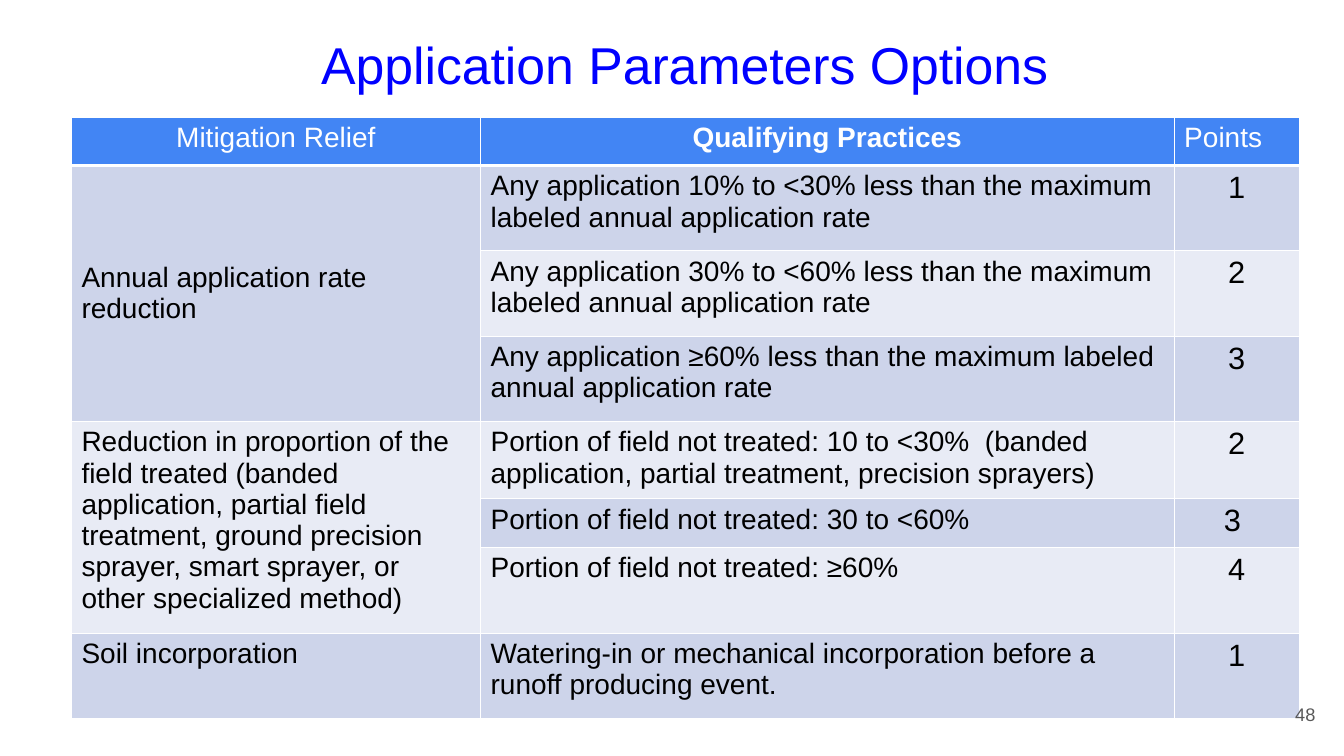
import pptx
import pptx.util
import pptx.dml.color
import pptx.enum.text
import pptx.oxml
import pptx.oxml.ns
from dataclasses import dataclass

Cm, Pt = pptx.util.Cm, pptx.util.Pt
Align = pptx.enum.text.PP_ALIGN
Anchor = pptx.enum.text.MSO_ANCHOR

# Content
TITLE = "Application Parameters Options"
PAGE = "48"
HEADS = [("Mitigation Relief", Align.CENTER, False),
         ("Qualifying Practices", Align.CENTER, True),
         ("Points", Align.LEFT, False)]
GROUPS = [
    ("Annual application rate reduction", Anchor.MIDDLE, [
        ("Any application 10% to ˂30% less than the maximum labeled annual application rate", "1"),
        ("Any application 30% to ˂60% less than the maximum labeled annual application rate", "2"),
        ("Any application ≥60% less than the maximum labeled annual application rate", "3")]),
    ("Reduction in proportion of the field treated (banded application, partial field treatment, "
     "ground precision sprayer, smart sprayer, or other specialized method)", Anchor.TOP, [
        ("Portion of field not treated: 10 to ˂30%  (banded application, partial treatment, "
         "precision sprayers)", "2"),
        ("Portion of field not treated: 30 to ˂60%", "3 "),
        ("Portion of field not treated: ≥60%", "4")]),
    ("Soil incorporation", Anchor.TOP, [
        ("Watering-in or mechanical incorporation before a runoff producing event.", "1")]),
]
WIDTHS = [10.31, 17.48, 3.15]
HEIGHTS = [1.22, 2.15, 2.15, 2.15, 1.82, 1.22, 1.98, 2.15]


@dataclass
class Theme:
    font: str = "Arial"
    title: str = "0000FF"
    page: str = "595959"
    head: str = "4285F4"
    bands: tuple = ("CDD4EA", "E8EBF5")
    ink: str = "000000"
    white: str = "FFFFFF"
    big: int = 37
    body: int = 20
    score: int = 22
    small: int = 13


theme = Theme()


def rgb(code):
    return pptx.dml.color.RGBColor.from_string(code)


def write(frame, text, size, color, align=Align.LEFT, bold=False):
    para = frame.paragraphs[0]
    para.text = text
    para.alignment = align
    font = para.font
    font.name, font.size, font.bold = theme.font, Pt(size), bold
    font.color.rgb = rgb(color)
    return para


def label(slide, area, *style):
    frame = slide.shapes.add_textbox(*map(Cm, area)).text_frame
    frame.word_wrap = True
    frame.vertical_anchor = Anchor.MIDDLE
    return write(frame, *style)


def paint(cell, color, base=1):
    """Fill a cell and give it white edges; base is the bottom width."""
    cell.fill.solid()
    cell.fill.fore_color.rgb = rgb(color)
    props = cell._tc.get_or_add_tcPr()
    for spot, (side, width) in enumerate(zip("LRTB", (1, 1, 1, base))):
        props.insert(spot, pptx.oxml.parse_xml(
            f'<a:ln{side} {pptx.oxml.ns.nsdecls("a")} w="{Pt(width)}"><a:solidFill>'
            f'<a:srgbClr val="{theme.white}"/></a:solidFill></a:ln{side}>'))


def build(slide):
    # Title and page number
    head = label(slide, (3.53, 0.81, 27.46, 1.78), TITLE, theme.big, theme.title, Align.CENTER)
    head.line_spacing = 0.9

    # Table grid
    grid = slide.shapes.add_table(len(HEIGHTS), len(WIDTHS), Cm(1.8), Cm(2.95),
                                  Cm(sum(WIDTHS)), Cm(sum(HEIGHTS))).table
    for col, width in zip(grid.columns, WIDTHS):
        col.width = Cm(width)
    for line, height in zip(grid.rows, HEIGHTS):
        line.height = Cm(height)

    # Fills: header, then alternating bands
    for row in range(len(HEIGHTS)):
        for col in range(len(WIDTHS)):
            color = theme.bands[(row - 1) % 2] if row else theme.head
            paint(grid.cell(row, col), color, 1 if row else 3)

    # Header text
    for col, (text, align, bold) in enumerate(HEADS):
        write(grid.cell(0, col).text_frame, text, theme.body, theme.white, align, bold)

    # Groups of practices
    row = 1
    for name, anchor, items in GROUPS:
        first = grid.cell(row, 0)
        if len(items) > 1:
            first.merge(grid.cell(row + len(items) - 1, 0))
        first.vertical_anchor = anchor
        write(first.text_frame, name, theme.body, theme.ink)
        for text, score in items:
            write(grid.cell(row, 1).text_frame, text, theme.body, theme.ink)
            write(grid.cell(row, 2).text_frame, score, theme.score, theme.ink, Align.CENTER)
            row += 1

    label(slide, (31.37, 17.27, 2.03, 1.45), PAGE, theme.small, theme.page, Align.RIGHT)


def main():
    deck = pptx.Presentation()
    deck.slide_width, deck.slide_height = Cm(33.87), Cm(19.05)
    build(deck.slides.add_slide(deck.slide_layouts[6]))
    deck.save("out.pptx")


if __name__ == "__main__":
    main()
